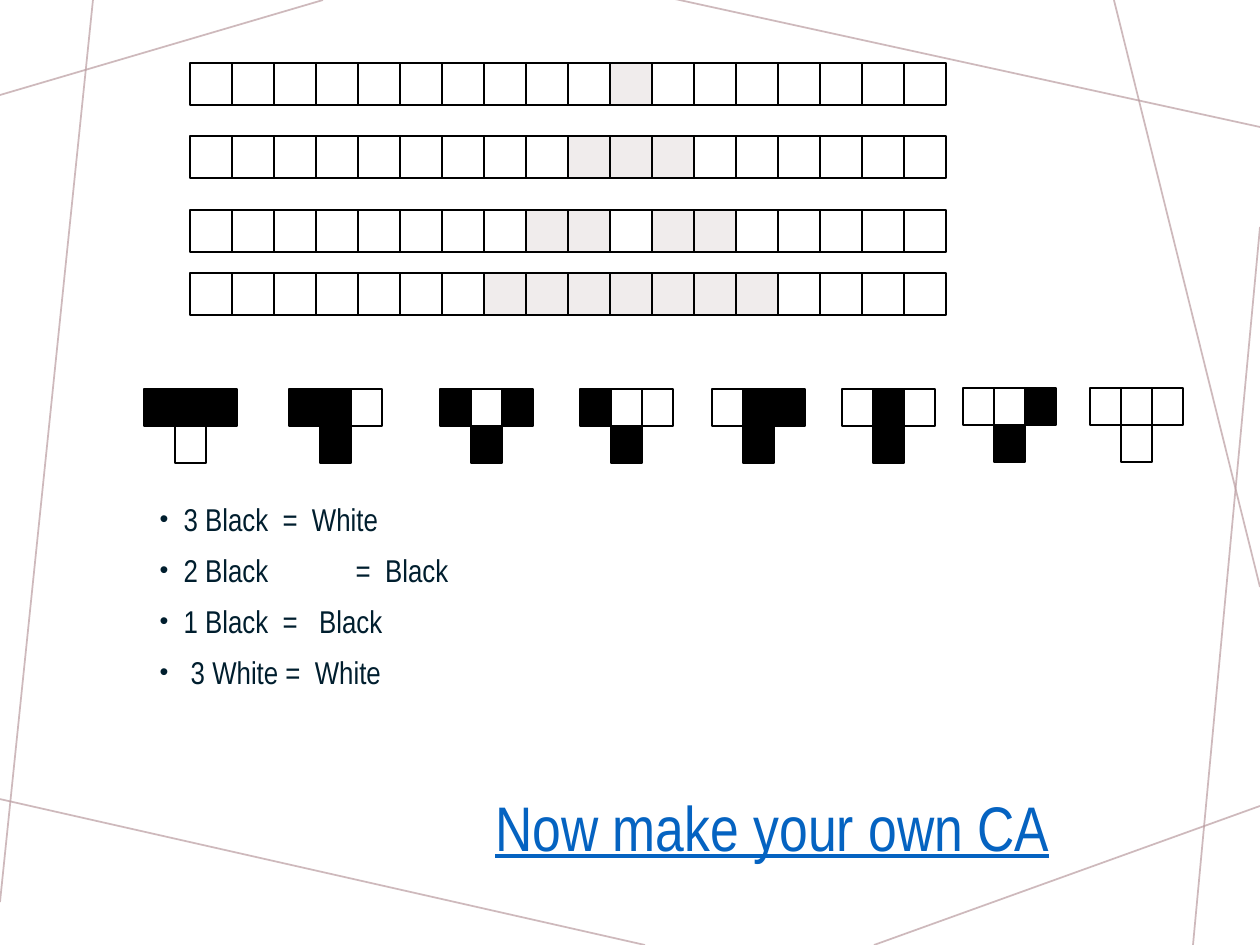
import dataclasses
import itertools
import typing

import lxml.etree
import pptx
import pptx.dml.color
import pptx.enum.shapes
import pptx.enum.text
import pptx.oxml.ns
import pptx.util

PIXELS_PER_INCH = 126
FONT_NAME = "Arial Narrow"
BLACK, WHITE, GREY, MAUVE = "000000", "FFFFFF", "F0ECEC", "BA9CA0"


@dataclasses.dataclass(frozen=True)
class Grid:
    left: int
    top: int
    width: int
    height: int


@dataclasses.dataclass(frozen=True)
class BackgroundLine:
    start: tuple[int, int]
    end: tuple[int, int]


BACKGROUND_LINES = [
    BackgroundLine((323, 0), (0, 95)),
    BackgroundLine((93, 0), (0, 902)),
    BackgroundLine((645, 945), (-5, 798)),
    BackgroundLine((1260, 806), (874, 945)),
    BackgroundLine((1260, 227), (1193, 945)),
    BackgroundLine((1260, 587), (1114, 0)),
    BackgroundLine((1260, 127), (675, -1)),
]
CELL_COUNT = 18
SEED_INDEX = 10
GENERATION_GRIDS = [Grid(190, top, 42, 42) for top in (63, 136, 210, 273)]
RULE_GRIDS = [
    Grid(left, top, 31, 37)
    for left, top in [
        (144, 389), (289, 389), (440, 389), (580, 389),
        (712, 389), (842, 389), (963, 388), (1090, 388),
    ]
]
RULE_TEXTS = [
    "3 Black  =  White",
    "2 Black \t =  Black",
    "1 Black  =   Black",
    " 3 White =  White",
]


def px(length: int) -> int:
    return round(length * pptx.util.Inches(1) / PIXELS_PER_INCH)


def color(value: str) -> pptx.dml.color.RGBColor:
    return pptx.dml.color.RGBColor.from_string(value)


def apply_format(target: typing.Any, values: dict[str, typing.Any]) -> None:
    for name, value in values.items():
        setattr(target, name, value)


def add_child(parent: typing.Any, tag: str, **attributes: str) -> typing.Any:
    return lxml.etree.SubElement(parent, pptx.oxml.ns.qn(tag), attributes)


def next_state(neighbours: tuple[bool, ...]) -> bool:
    return sum(neighbours) in (1, 2)


def next_generation(cells: list[bool]) -> list[bool]:
    padded = [False, *cells, False]
    return [next_state(tuple(padded[i:i + 3])) for i in range(len(cells))]


def draw_background_line(slide: typing.Any, line: BackgroundLine) -> None:
    connector = slide.shapes.add_connector(
        pptx.enum.shapes.MSO_CONNECTOR.STRAIGHT,
        *map(px, line.start + line.end),
    )
    connector.line.width = pptx.util.Pt(1)
    connector.line.color.rgb = color(MAUVE)
    fill = connector.line.color._xFill
    add_child(fill[0], "a:alpha", val="70000")
    add_child(connector._element.spPr, "a:effectLst")


def draw_cell(group: typing.Any, grid: Grid, column: int, row: int, fill: str) -> None:
    shape = group.shapes.add_shape(
        pptx.enum.shapes.MSO_SHAPE.RECTANGLE,
        px(grid.left + column * grid.width),
        px(grid.top + row * grid.height),
        px(grid.width),
        px(grid.height),
    )
    shape.shadow.inherit = False
    shape.fill.solid()
    shape.fill.fore_color.rgb = color(fill)
    shape.line.color.rgb = color(BLACK)
    shape.line.width = pptx.util.Pt(0.75)


def draw_rules(slide: typing.Any) -> None:
    group = slide.shapes.add_group_shape()
    patterns = itertools.product((True, False), repeat=3)
    for grid, pattern in zip(RULE_GRIDS, patterns):
        for column, filled in enumerate(pattern):
            draw_cell(group, grid, column, 0, BLACK if filled else WHITE)
        draw_cell(group, grid, 1, 1, BLACK if next_state(pattern) else WHITE)


def draw_generations(slide: typing.Any) -> None:
    cells = [index == SEED_INDEX for index in range(CELL_COUNT)]
    for grid in GENERATION_GRIDS:
        group = slide.shapes.add_group_shape()
        for column, filled in enumerate(cells):
            draw_cell(group, grid, column, 0, GREY if filled else WHITE)
        cells = next_generation(cells)


def add_styled_run(paragraph: typing.Any, text: str, size: int, hex_color: str,
                   underline: bool = False) -> None:
    run = paragraph.add_run()
    run.text = text
    apply_format(run.font, {
        "name": FONT_NAME,
        "size": pptx.util.Pt(size),
        "underline": underline,
    })
    run.font.color.rgb = color(hex_color)


def place(shape: typing.Any, grid: Grid) -> None:
    apply_format(shape, {
        name: px(value) for name, value in dataclasses.asdict(grid).items()
    })


def fill_rule_list(body: typing.Any) -> None:
    place(body, Grid(147, 494, 1029, 325))
    frame = body.text_frame
    apply_format(frame, {
        "word_wrap": True,
        "auto_size": pptx.enum.text.MSO_AUTO_SIZE.NONE,
        "vertical_anchor": pptx.enum.text.MSO_ANCHOR.TOP,
    })
    for index, text in enumerate(RULE_TEXTS):
        paragraph = frame.add_paragraph() if index else frame.paragraphs[0]
        properties = paragraph._p.get_or_add_pPr()
        indent = px(24)
        for name, value in {"marL": indent, "indent": -indent, "defTabSz": pptx.util.Inches(0.75)}.items():
            properties.set(name, str(int(value)))
        add_child(properties, "a:buSzPct", val="80000")
        add_child(properties, "a:buFont", typeface="Arial")
        add_child(properties, "a:buChar", char="•")
        paragraph.space_before = pptx.util.Pt(7.5 if index else 0)
        add_styled_run(paragraph, text, 18, "001E2E")


def draw_call_to_action(slide: typing.Any) -> None:
    box = slide.shapes.add_textbox(0, 0, 0, 0)
    place(box, Grid(483, 776, 615, 101))
    apply_format(box.text_frame, {
        "word_wrap": True,
        "vertical_anchor": pptx.enum.text.MSO_ANCHOR.MIDDLE,
    })
    add_styled_run(box.text_frame.paragraphs[0], "Now make your own CA", 36, "0563C1", True)


def main() -> None:
    presentation = pptx.Presentation()
    apply_format(presentation, {"slide_width": px(1260), "slide_height": px(945)})
    slide = presentation.slides.add_slide(presentation.slide_layouts[1])
    title, body = slide.placeholders
    title._element.getparent().remove(title._element)
    for line in BACKGROUND_LINES:
        draw_background_line(slide, line)
    draw_rules(slide)
    fill_rule_list(body)
    draw_generations(slide)
    draw_call_to_action(slide)
    presentation.save("out.pptx")


if __name__ == "__main__":
    main()
